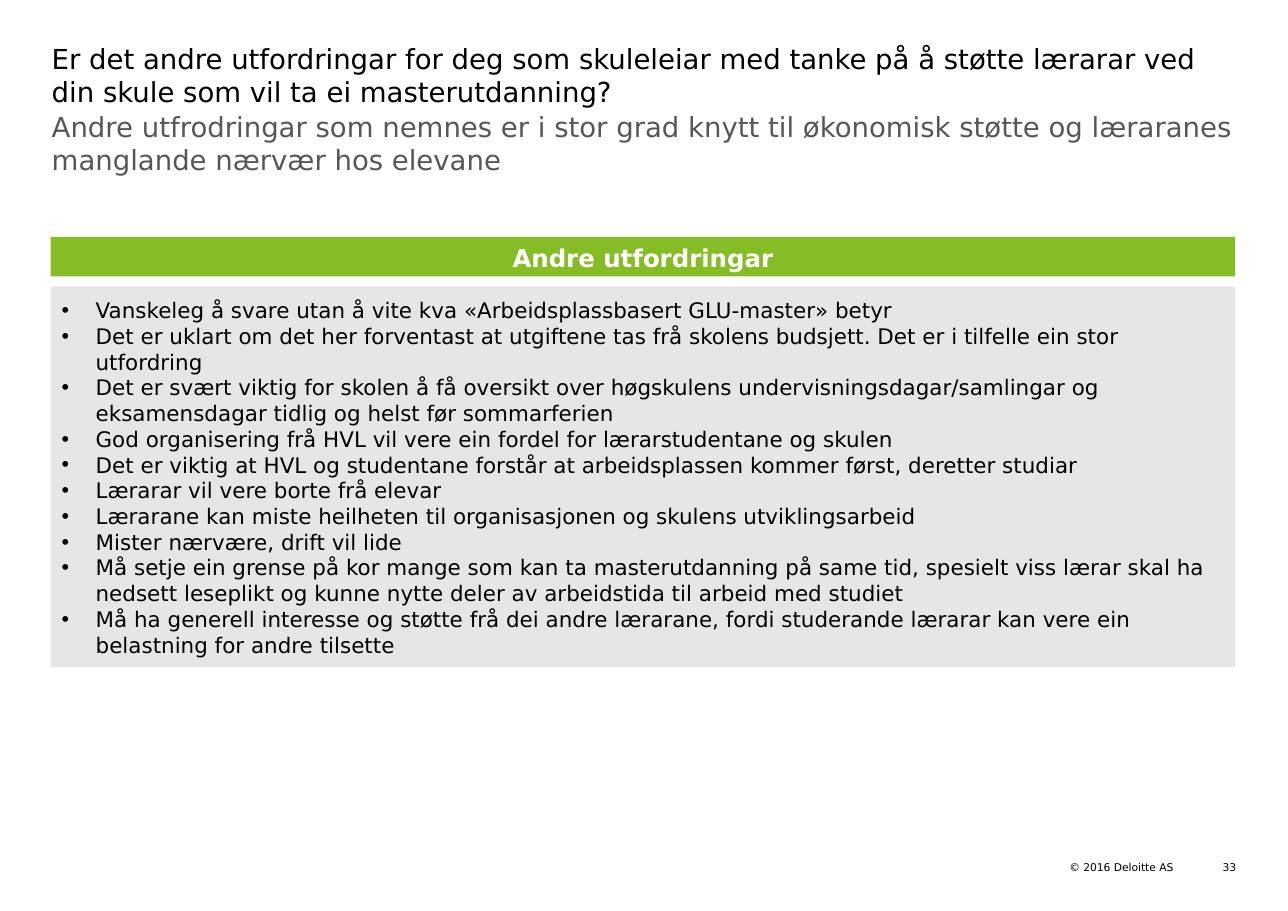
from lxml.etree import SubElement
from pptx import Presentation
from pptx.dml.color import RGBColor
from pptx.enum.shapes import MSO_SHAPE as Shape
from pptx.enum.text import MSO_ANCHOR as Anchor, PP_ALIGN as Align
from pptx.oxml.ns import qn
from pptx.util import Inches, Pt

COLOURS = {
    "black": "000000",
    "grey": "575757",
    "panel": "E7E6E6",
    "green": "86BC25",
    "white": "FFFFFF",
}

CHALLENGES = [
    "Vanskeleg å svare utan å vite kva «Arbeidsplassbasert GLU-master» betyr",
    "Det er uklart om det her forventast at utgiftene tas frå skolens budsjett. "
    "Det er i tilfelle ein stor utfordring",
    "Det er svært viktig for skolen å få oversikt over høgskulens "
    "undervisningsdagar/samlingar og eksamensdagar tidlig og helst før sommarferien",
    "God organisering frå HVL vil vere ein fordel for lærarstudentane og skulen",
    "Det er viktig at HVL og studentane forstår at arbeidsplassen kommer først, "
    "deretter studiar",
    "Lærarar vil vere borte frå elevar",
    "Lærarane kan miste heilheten til organisasjonen og skulens utviklingsarbeid",
    "Mister nærvære, drift vil lide",
    "Må setje ein grense på kor mange som kan ta masterutdanning på same tid, "
    "spesielt viss lærar skal ha nedsett leseplikt og kunne nytte deler av "
    "arbeidstida til arbeid med studiet",
    "Må ha generell interesse og støtte frå dei andre lærarane, fordi studerande "
    "lærarar kan vere ein belastning for andre tilsette",
]


class SlideBuilder:
    """Holds the style and the current slide, and adds elements to it."""

    font_name = "DejaVu Sans"
    bullet_indent = Inches(0.31)

    def __init__(self, slide):
        self.slide = slide

    def colour(self, name):
        return RGBColor.from_string(COLOURS[name])

    def fill_text(self, shape, paragraphs, size, colour="black", bold=False,
                  align=Align.LEFT, anchor=Anchor.TOP, margin=0, bullets=False,
                  line_spacing=None):
        frame = shape.text_frame
        frame.word_wrap = True
        frame.vertical_anchor = anchor
        frame.margin_left = frame.margin_right = Inches(margin)
        frame.margin_top = frame.margin_bottom = Inches(margin)
        frame.text = "\n".join(paragraphs)
        for paragraph in frame.paragraphs:
            paragraph.alignment = align
            paragraph.line_spacing = line_spacing
            if bullets:
                self.add_bullet(paragraph)
            font = paragraph.font
            for target in (font, *(run.font for run in paragraph.runs)):
                target.name = self.font_name
                target.size = Pt(size)
                target.bold = bold
                target.color.rgb = self.colour(colour)

    def add_bullet(self, paragraph):
        properties = paragraph._p.get_or_add_pPr()
        properties.set("marL", str(self.bullet_indent))
        properties.set("indent", str(-self.bullet_indent))
        SubElement(properties, qn("a:buFont"), typeface="Arial")
        SubElement(properties, qn("a:buChar"), char="•")

    def text(self, text, box, **style):
        shape = self.slide.shapes.add_textbox(*map(Inches, box))
        self.fill_text(shape, [text], **style)

    def panel(self, paragraphs, box, fill, **style):
        shape = self.slide.shapes.add_shape(Shape.RECTANGLE, *map(Inches, box))
        shape.shadow.inherit = False
        shape.fill.solid()
        shape.fill.fore_color.rgb = self.colour(fill)
        shape.line.fill.background()
        self.fill_text(shape, paragraphs, margin=0.1, **style)


def main():
    presentation = Presentation()
    presentation.slide_width = Inches(11.69)
    presentation.slide_height = Inches(8.27)
    builder = SlideBuilder(
        presentation.slides.add_slide(presentation.slide_layouts[6]))

    builder.text(
        "Er det andre utfordringar for deg som skuleleiar med tanke på å støtte "
        "lærarar ved din skule som vil ta ei masterutdanning?",
        (0.47, 0.38, 10.74, 0.4), size=18)
    builder.text(
        "Andre utfrodringar som nemnes er i stor grad knytt til økonomisk støtte "
        "og læraranes manglande nærvær hos elevane",
        (0.47, 1, 10.74, 0.7), size=18, colour="grey")

    builder.panel(CHALLENGES, (0.46, 2.6, 10.75, 3.46), "panel",
                  size=14, bullets=True)
    builder.panel(["Andre utfordringar"], (0.46, 2.15, 10.75, 0.36), "green",
                  size=16, colour="white", bold=True, align=Align.CENTER,
                  anchor=Anchor.MIDDLE, line_spacing=1.06)

    builder.text("© 2016 Deloitte AS", (9.68, 7.81, 0.97, 0.12), size=7,
                 align=Align.RIGHT, anchor=Anchor.MIDDLE)
    builder.text("33", (10.92, 7.81, 0.3, 0.12), size=7, align=Align.RIGHT)

    presentation.save("out.pptx")


if __name__ == "__main__":
    main()
